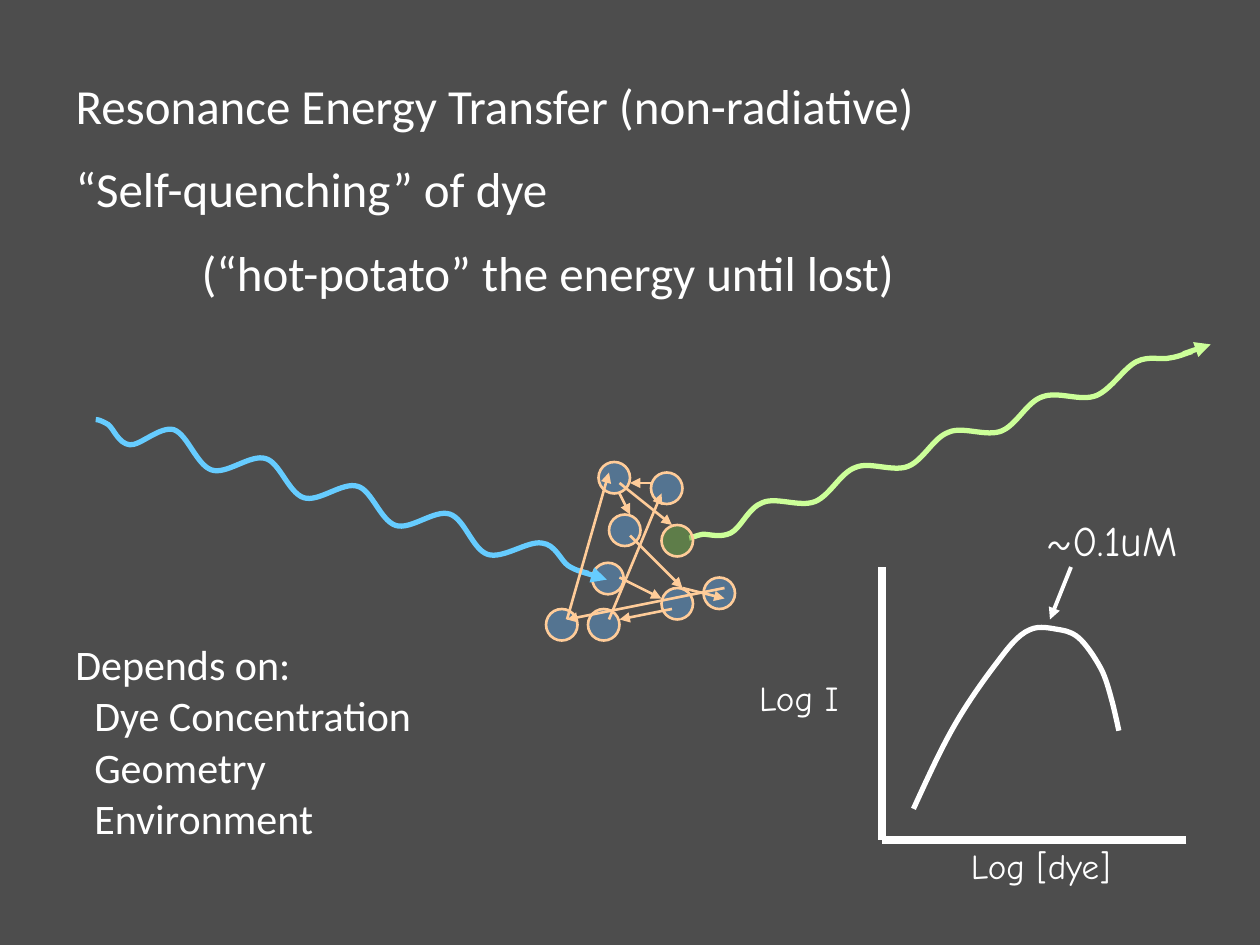
import pptx
import pptx.util
import pptx.dml.color
import pptx.enum.shapes
import pptx.enum.text
import pptx.oxml
import pptx.oxml.ns
from lxml import etree

CELL = 1 / 12
WHITE, PEACH, SKY, LIME = "FFFFFF", "FFCC99", "66CCFF", "CCFF99"
DYE, EMITTER = "5B9BD5", "70AD47"
FIRST_DYE = (56.4, 53.6)
DYES = [(63, 56, DYE), (63, 50, EMITTER), (56, 58, DYE), (58, 49, DYE),
        (52, 58, DYE), (67, 55, DYE), (62, 45, DYE), (57, 44, DYE)]
HOPS = [(59, 55, 63, 57), (64, 58, 59, 59), (58, 59, 63, 47), (62, 46, 60, 46),
        (59, 47, 60, 49), (60, 51, 65, 56), (65, 56, 69, 57), (69, 56, 54, 59),
        (54, 59, 58, 45), (59, 46, 64, 50)]

BLUE_START = [(0.76, 3.33), (0.78, 3.33), (0.81, 3.34), (0.86, 3.37),
              (0.9, 3.4), (0.94, 3.52), (1.03, 3.53),
              (1.11, 3.54), (1.27, 3.38), (1.38, 3.41)]
BLUE_CYCLE = [(1.49, 3.45), (1.56, 3.69), (1.68, 3.73),
              (1.8, 3.77), (1.99, 3.6), (2.11, 3.64)]
BLUE_END = [(3.69, 4.12), (3.75, 4.36), (3.87, 4.4),
            (3.99, 4.44), (4.19, 4.29), (4.3, 4.31),
            (4.41, 4.32), (4.45, 4.45), (4.51, 4.49),
            (4.57, 4.53), (4.63, 4.54), (4.67, 4.55)]
GREEN_START = [(5.47, 4.27), (5.49, 4.27), (5.52, 4.25), (5.58, 4.24),
               (5.63, 4.24), (5.72, 4.27), (5.8, 4.23),
               (5.88, 4.19), (5.94, 4.03), (6.05, 3.99)]
GREEN_CYCLE = [(6.16, 3.94), (6.35, 4.03), (6.47, 3.98),
               (6.59, 3.93), (6.67, 3.75), (6.79, 3.71)]
GREEN_END = [(8.4, 3.1), (8.57, 3.19), (8.7, 3.14),
             (8.82, 3.09), (8.92, 2.92), (9.02, 2.87),
             (9.12, 2.82), (9.21, 2.86), (9.29, 2.84),
             (9.36, 2.83), (9.42, 2.8), (9.46, 2.79)]
INTENSITY = [(7.25, 6.42), (7.36, 6.18), (7.47, 5.94), (7.58, 5.75),
             (7.69, 5.56), (7.82, 5.38), (7.92, 5.25),
             (8.01, 5.13), (8.08, 5.04), (8.17, 5),
             (8.25, 4.96), (8.35, 4.99), (8.42, 5),
             (8.48, 5.01), (8.53, 5.03), (8.58, 5.08),
             (8.64, 5.14), (8.71, 5.25), (8.75, 5.33),
             (8.79, 5.42), (8.81, 5.51), (8.83, 5.58),
             (8.85, 5.66), (8.87, 5.75), (8.88, 5.8)]


def rgb(code):
    """Turn a hex string into a colour."""
    return pptx.dml.color.RGBColor.from_string(code)


def sub(parent, tag, **attrs):
    """Append a DrawingML element to its parent."""
    return etree.SubElement(parent, pptx.oxml.ns.qn(tag), **attrs)


def set_line(sp, color, width):
    """Give a shape or connector a solid line."""
    sp.line.color.rgb = rgb(color)
    sp.line.width = pptx.util.Pt(width)


def add_line(s, ends, color, width, arrow=True):
    """Draw a straight line between two grid points."""
    sp = s.shapes.add_connector(pptx.enum.shapes.MSO_CONNECTOR.STRAIGHT,
                                *[pptx.util.Inches(v * CELL) for v in ends])
    set_line(sp, color, width)
    if arrow:
        sub(sp.line._get_or_add_ln(), "a:tailEnd", type="triangle")
    sub(sp._element.spPr, "a:effectLst")


def add_dye(s, col, row, color):
    """Draw one half-transparent dye molecule on the grid."""
    size = pptx.util.Inches(3 * CELL)
    sp = s.shapes.add_shape(pptx.enum.shapes.MSO_SHAPE.OVAL, pptx.util.Inches(col * CELL),
                            pptx.util.Inches(row * CELL), size, size)
    sp.shadow.inherit = False
    sp.fill.solid()
    sp.fill.fore_color.rgb = rgb(color)
    sub(sp._element.spPr.find(".//" + pptx.oxml.ns.qn("a:srgbClr")), "a:alpha", val="50000")
    set_line(sp, PEACH, 1.5)


def add_curve(s, points, color):
    """Draw a smooth curve from a start point and triples of Bezier points."""
    start, *rest = [(pptx.util.Inches(x), pptx.util.Inches(y)) for x, y in points]
    fb = s.shapes.build_freeform(*start)
    fb.add_line_segments(rest, close=False)
    sp = fb.convert_to_shape()
    sp.shadow.inherit = False
    sp.fill.background()
    set_line(sp, color, 3)
    outline = sp._element.spPr.find(".//" + pptx.oxml.ns.qn("a:path"))
    segments = outline.findall(pptx.oxml.ns.qn("a:lnTo"))
    for i in range(0, len(segments), 3):
        bezier = sub(outline, "a:cubicBezTo")
        for segment in segments[i:i + 3]:
            bezier.append(segment[0])
            outline.remove(segment)


def wave(start, cycle, step, end):
    """Join a start, three shifted cycles and an end."""
    cycles = [(x + k * step[0], y + k * step[1]) for k in range(3) for x, y in cycle]
    return start + cycles + end


def set_text(sp, lines, size, font, align, indents=None, before=0, spacing=None):
    """Write and format paragraphs in a shape."""
    tf = sp.text_frame
    tf.text = "\n".join(lines)
    tf.vertical_anchor = pptx.enum.text.MSO_ANCHOR.MIDDLE
    tf.auto_size = pptx.enum.text.MSO_AUTO_SIZE.NONE
    for p, indent in zip(tf.paragraphs, indents or [0] * len(lines)):
        p.alignment = align
        p.space_before = pptx.util.Pt(before)
        p.line_spacing = spacing
        p._p.get_or_add_pPr().set("marL", str(pptx.util.Inches(indent)))
        for r in p.runs:
            r.font.size = pptx.util.Pt(size)
            r.font.name = font
            r.font.color.rgb = rgb(WHITE)


def add_text(s, box, lines, size, font, align, wrap=False, **layout):
    """Add a text box with formatted paragraphs."""
    sp = s.shapes.add_textbox(*[pptx.util.Inches(v) for v in box])
    set_text(sp, lines, size, font, align, **layout)
    sp.text_frame.word_wrap = wrap


def add_title(s, left):
    """Place the three-line heading in the title placeholder."""
    sp = s.shapes.title
    sp.left, sp.top, sp.width, sp.height = [pptx.util.Inches(v) for v in (0.5, 0.5, 8.25, 1.99)]
    set_text(sp, ["Resonance Energy Transfer (non-radiative)", "“Self-quenching” of dye",
                  "(“hot-potato” the energy until lost)"],
             28, "Calibri", left, indents=[0, 0, 1], before=14)


def add_graph(s, center):
    """Draw the intensity against concentration graph."""
    add_line(s, (84, 54, 84, 80), WHITE, 4.5, arrow=False)
    add_line(s, (113, 80, 84, 80), WHITE, 4.5, arrow=False)
    add_curve(s, INTENSITY, WHITE)
    for text, box, size in [("Log [dye]", (7.56, 6.62, 1.4, 0.49), 20),
                            ("Log I", (5.9, 5.29, 0.88, 0.49), 20),
                            ("~0.1uM", (8.17, 4, 1.31, 0.57), 24)]:
        add_text(s, box, [text], size, "Comic Neue", center)
    add_line(s, (102, 54, 100, 59), WHITE, 2.25)


def main():
    """Build the slide and save it."""
    prs = pptx.Presentation()
    prs.slide_width, prs.slide_height = pptx.util.Inches(10), pptx.util.Inches(7.5)
    s = prs.slides.add_slide(prs.slide_layouts[5])
    s.background.fill.solid()
    s.background.fill.fore_color.rgb = rgb("4D4D4D")
    left, center = pptx.enum.text.PP_ALIGN.LEFT, pptx.enum.text.PP_ALIGN.CENTER
    add_title(s, left)
    add_dye(s, *FIRST_DYE, DYE)
    add_curve(s, wave(BLUE_START, BLUE_CYCLE, (0.73, 0.22), BLUE_END), SKY)
    add_line(s, (55.2, 54.4, 57.8, 55.2), SKY, 3)
    add_curve(s, wave(GREEN_START, GREEN_CYCLE, (0.74, -0.28), GREEN_END), LIME)
    add_line(s, (112.7, 33.7, 115.3, 32.8), LIME, 3)
    for dye in DYES:
        add_dye(s, *dye)
    for hop in HOPS:
        add_line(s, hop, PEACH, 1.5)
    add_text(s, (0.5, 5.09, 4.74, 1.7),
             ["Depends on:", "Dye Concentration", "Geometry", "Environment"],
             24, "Calibri", left, wrap=True, indents=[0, 0.15, 0.15, 0.15],
             before=12, spacing=0.6)
    add_graph(s, center)
    prs.save("out.pptx")


if __name__ == "__main__":
    main()
